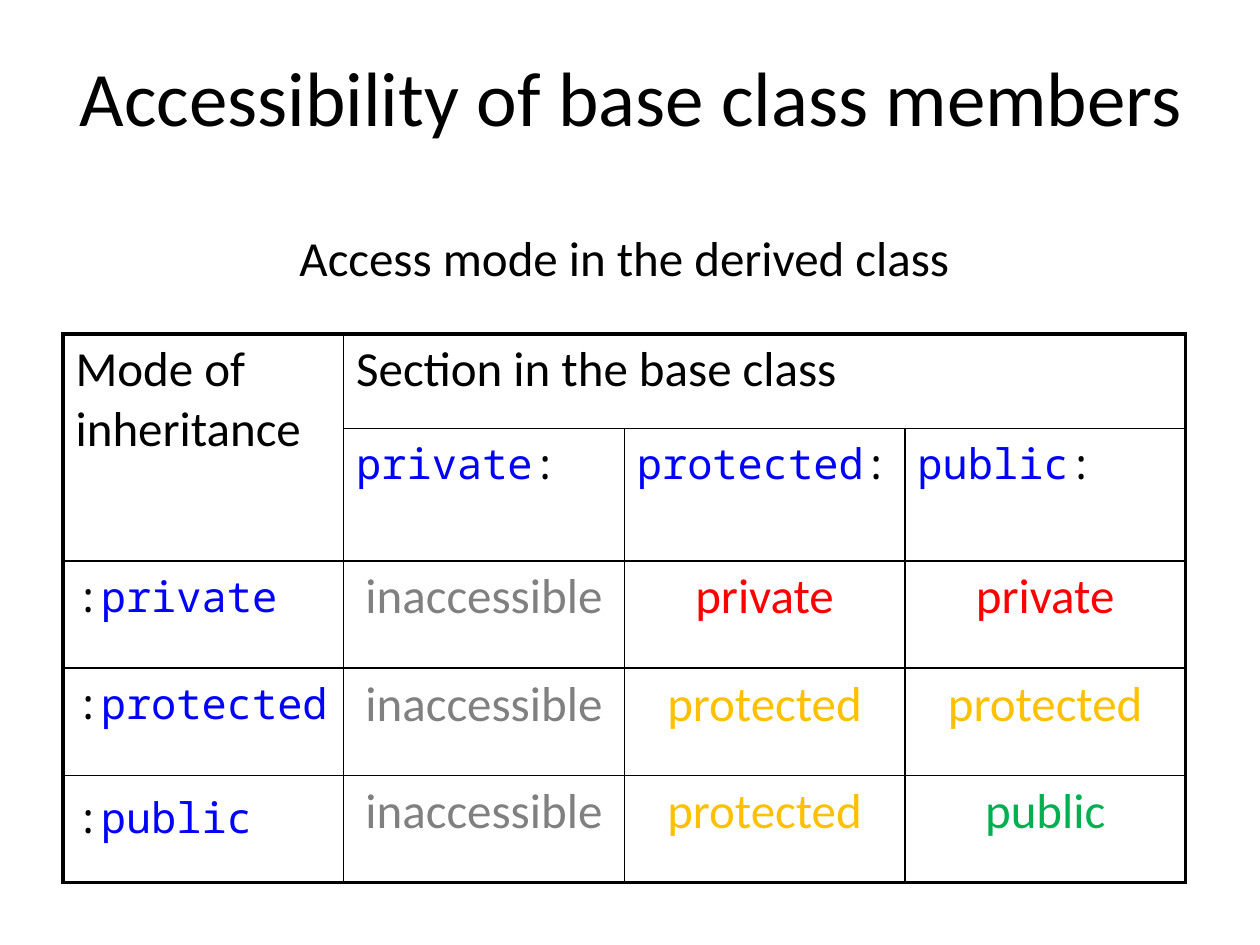
from dataclasses import dataclass

import lxml.etree
import pptx
import pptx.dml.color
import pptx.enum.text
import pptx.oxml.ns
import pptx.util

Cm = pptx.util.Cm
Align = pptx.enum.text.PP_ALIGN

BLACK, BLUE, GREY = "000000", "0000FF", "808080"
RED, AMBER, GREEN = "FF0000", "FFC000", "00B050"
PROSE, CODE = "Calibri", "Noto Sans Mono"
ACCESS_COLOURS = {"inaccessible": GREY, "private": RED, "protected": AMBER, "public": GREEN}


@dataclass
class Span:
    text: str
    colour: str = BLACK
    font: str = PROSE
    size: float = 28


@dataclass
class Entry:
    row: int
    column: int
    spans: list[Span]
    align: Align = Align.LEFT


def rgb(colour: str) -> pptx.dml.color.RGBColor:
    return pptx.dml.color.RGBColor.from_string(colour)


def write(para, spans: list[Span], align: Align) -> None:
    para.alignment = align
    for span in spans:
        run = para.add_run()
        run.text = span.text
        for name, value in {"name": span.font, "size": pptx.util.Pt(span.size)}.items():
            setattr(run.font, name, value)
        run.font.color.rgb = rgb(span.colour)


def place(box, left: float, top: float, width: float, height: float) -> None:
    lengths = {"left": left, "top": top, "width": width, "height": height}
    for name, value in lengths.items():
        setattr(box, name, Cm(value))


def keyword(name: str, before: str = "", after: str = "") -> list[Span]:
    parts = [(before, BLACK), (name, BLUE), (after, BLACK)]
    return [Span(text, colour, CODE, 24) for text, colour in parts if text]


def draw_borders(table) -> None:
    """Thick lines round the table, thin lines between its cells."""
    qn = pptx.oxml.ns.qn
    last_row, last_column = len(table.rows) - 1, len(table.columns) - 1
    for row in range(last_row + 1):
        for column in range(last_column + 1):
            cell = table.cell(row, column)
            cell.fill.background()
            outer = {
                "a:lnL": column == 0,
                "a:lnR": column + cell.span_width - 1 == last_column,
                "a:lnT": row == 0,
                "a:lnB": row + cell.span_height - 1 == last_row,
            }
            properties = cell._tc.get_or_add_tcPr()
            edges = [edge for edge in outer if outer[edge] or not cell.is_spanned]
            for index, edge in enumerate(edges):
                width = pptx.util.Pt(2.25 if outer[edge] else 1)
                line = lxml.etree.Element(qn(edge), w=str(int(width)))
                fill = lxml.etree.SubElement(line, qn("a:solidFill"))
                lxml.etree.SubElement(fill, qn("a:srgbClr"), val=BLACK)
                properties.insert(index, line)


def draw_table(page, entries: list[Entry], heights: list[float], columns: int) -> None:
    table = page.shapes.add_table(
        len(heights), columns, Cm(1.27), Cm(6.73), Cm(22.63), Cm(sum(heights))
    ).table
    for name in ("first_row", "horz_banding"):
        setattr(table, name, False)
    for row, height in zip(table.rows, heights):
        row.height = Cm(height)
    table.cell(0, 0).merge(table.cell(1, 0))
    table.cell(0, 1).merge(table.cell(0, columns - 1))
    for entry in entries:
        para = table.cell(entry.row, entry.column).text_frame.paragraphs[0]
        write(para, entry.spans, entry.align)
    draw_borders(table)


def access_entries() -> list[Entry]:
    modes = ["private", "protected", "public"]
    results = [
        ["inaccessible", "private", "private"],
        ["inaccessible", "protected", "protected"],
        ["inaccessible", "protected", "public"],
    ]
    entries = [
        Entry(0, 0, [Span("Mode of inheritance")]),
        Entry(0, 1, [Span("Section in the base class")]),
    ]
    for index, (mode, outcomes) in enumerate(zip(modes, results)):
        entries.append(Entry(1, index + 1, keyword(mode, after=":")))
        entries.append(Entry(index + 2, 0, keyword(mode, before=":")))
        for column, access in enumerate(outcomes, start=1):
            spans = [Span(access, ACCESS_COLOURS[access])]
            entries.append(Entry(index + 2, column, spans, Align.CENTER))
    # A larger closing space lowers the baseline of the last row label
    entries.append(Entry(4, 0, [Span(" ", font=CODE)]))
    return entries


def main() -> None:
    deck = pptx.Presentation()
    deck.slide_width, deck.slide_height = Cm(25.4), Cm(19.05)
    page = deck.slides.add_slide(deck.slide_layouts[1])

    # Title and caption
    title, body = page.shapes.title, page.placeholders[1]
    place(title, 1.3, 0.33, 22.86, 3.18)
    title.text_frame.vertical_anchor = pptx.enum.text.MSO_ANCHOR.MIDDLE
    heading = Span("Accessibility of base class members", size=44)
    write(title.text_frame.paragraphs[0], [heading], Align.CENTER)
    place(body, 1.27, 4.45, 22.63, 12.57)
    caption = body.text_frame.paragraphs[0]
    write(caption, [Span("Access mode in the derived class")], Align.CENTER)
    lxml.etree.SubElement(caption._p.get_or_add_pPr(), pptx.oxml.ns.qn("a:buNone"))

    # Access table
    draw_table(page, access_entries(), [1.91] * 2 + [2.16] * 3, columns=4)
    deck.save("out.pptx")


if __name__ == "__main__":
    main()
